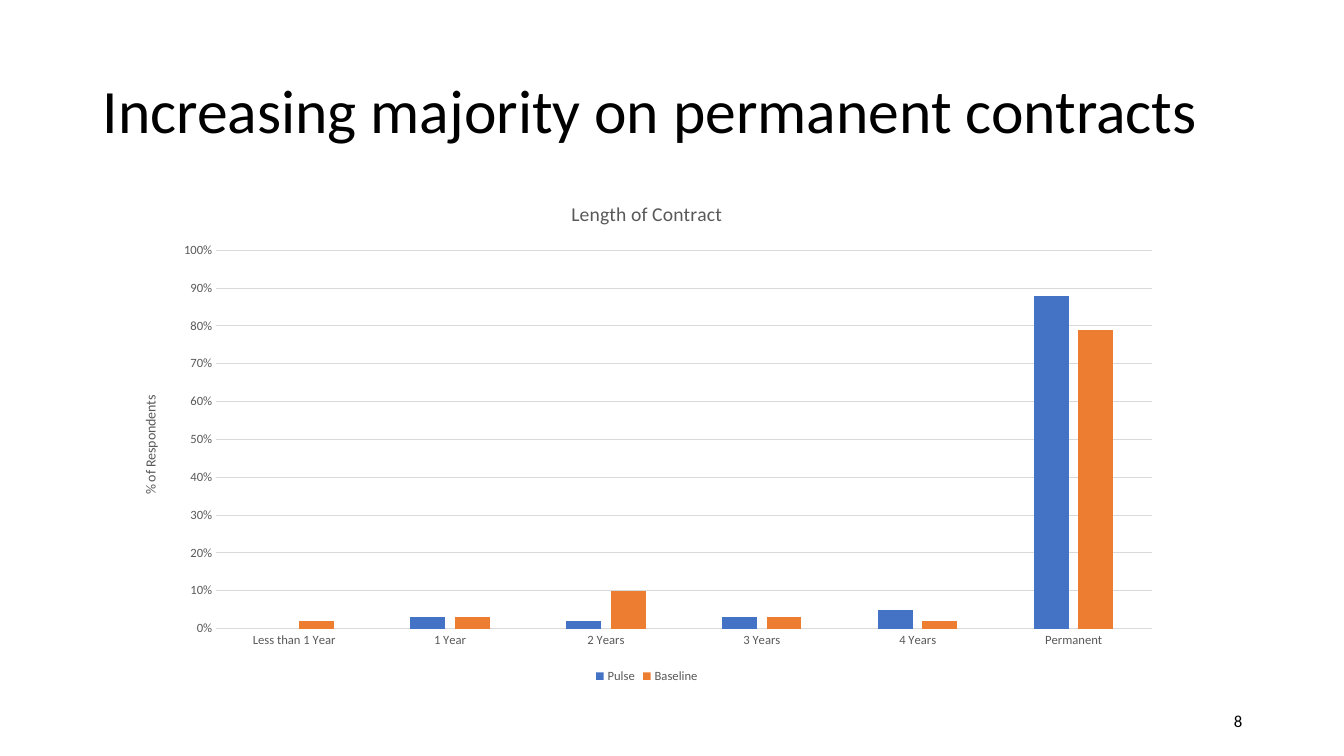
from pptx import Presentation
from pptx.chart.data import CategoryChartData
from pptx.dml.color import RGBColor
from pptx.enum.chart import XL_CHART_TYPE as ChartType, XL_LEGEND_POSITION as LegendPosition
from pptx.enum.chart import XL_TICK_MARK as TickMark
from pptx.enum.text import MSO_ANCHOR as Anchor, PP_ALIGN as Align
from pptx.util import Inches, Pt

BLACK = RGBColor(0x00, 0x00, 0x00)
GREY = RGBColor(0x59, 0x59, 0x59)
LIGHT_GREY = RGBColor(0xD9, 0xD9, 0xD9)
BLUE = RGBColor(0x44, 0x72, 0xC4)
ORANGE = RGBColor(0xED, 0x7D, 0x31)

CONTRACT_LENGTHS = ["Less than 1 Year", "1 Year", "2 Years", "3 Years", "4 Years", "Permanent"]
SURVEYS = [
    ("Pulse", BLUE, [None, 0.03, 0.02, 0.03, 0.05, 0.88]),
    ("Baseline", ORANGE, [0.02, 0.03, 0.1, 0.03, 0.02, 0.79]),
]


class SlideBuilder:
    font_name = "Calibri"

    def __init__(self, slide):
        self.slide = slide

    def style_font(self, font, size, color):
        font.name = self.font_name
        font.size = Pt(size)
        font.bold = False
        font.color.rgb = color

    def style_line(self, line):
        line.color.rgb = LIGHT_GREY
        line.width = Pt(0.75)

    def text(self, content, left, top, width, height, size, align=Align.LEFT, spacing=1.0):
        box = self.slide.shapes.add_textbox(Inches(left), Inches(top), Inches(width), Inches(height))
        frame = box.text_frame
        frame.word_wrap = True
        frame.vertical_anchor = Anchor.MIDDLE
        paragraph = frame.paragraphs[0]
        paragraph.text = content
        paragraph.alignment = align
        paragraph.line_spacing = spacing
        self.style_font(paragraph.font, size, BLACK)

    def heading(self, frame, content, size):
        frame.text = content
        self.style_font(frame.paragraphs[0].font, size, GREY)

    def axis(self, axis):
        axis.major_tick_mark = TickMark.NONE
        axis.minor_tick_mark = TickMark.NONE
        self.style_font(axis.tick_labels.font, 9, GREY)

    def column_chart(self, title, value_title, categories, surveys, left, top, width, height):
        data = CategoryChartData(number_format="0%")
        data.categories = categories
        for name, _, shares in surveys:
            data.add_series(name, shares)
        chart = self.slide.shapes.add_chart(
            ChartType.COLUMN_CLUSTERED,
            Inches(left), Inches(top), Inches(width), Inches(height), data,
        ).chart
        self.style_font(chart.font, 10, BLACK)

        chart.has_title = True
        self.heading(chart.chart_title.text_frame, title, 14)
        chart.chart_title.include_in_layout = False

        chart.has_legend = True
        chart.legend.position = LegendPosition.BOTTOM
        chart.legend.include_in_layout = False
        self.style_font(chart.legend.font, 9, GREY)

        self.axis(chart.category_axis)
        self.style_line(chart.category_axis.format.line)

        shares_axis = chart.value_axis
        self.axis(shares_axis)
        shares_axis.minimum_scale = 0
        shares_axis.maximum_scale = 1
        shares_axis.major_unit = 0.1
        shares_axis.tick_labels.number_format = "0%"
        shares_axis.tick_labels.number_format_is_linked = False
        shares_axis.format.line.fill.background()
        self.style_line(shares_axis.major_gridlines.format.line)
        value_heading = shares_axis.axis_title.text_frame
        self.heading(value_heading, value_title, 10)
        value_heading._txBody.bodyPr.set("rot", "-5400000")
        value_heading._txBody.bodyPr.set("vert", "horz")

        plot = chart.plots[0]
        plot.gap_width = 219
        plot.overlap = -27
        plot.vary_by_categories = False
        for series, (_, color, _) in zip(plot.series, surveys):
            series.invert_if_negative = False
            series.format.fill.solid()
            series.format.fill.fore_color.rgb = color


def main():
    presentation = Presentation()
    presentation.slide_width = Inches(13.33)
    presentation.slide_height = Inches(7.5)
    builder = SlideBuilder(presentation.slides.add_slide(presentation.slide_layouts[6]))
    builder.text("Increasing majority on permanent contracts", 0.92, 0.4, 11.5, 1.45, 44, spacing=0.9)
    builder.text("8", 9.42, 6.95, 3, 0.4, 12, align=Align.RIGHT)
    builder.column_chart(
        "Length of Contract", "% of Respondents", CONTRACT_LENGTHS, SURVEYS,
        1.2, 1.8, 10.43, 5.02,
    )
    presentation.save("out.pptx")


if __name__ == "__main__":
    main()
